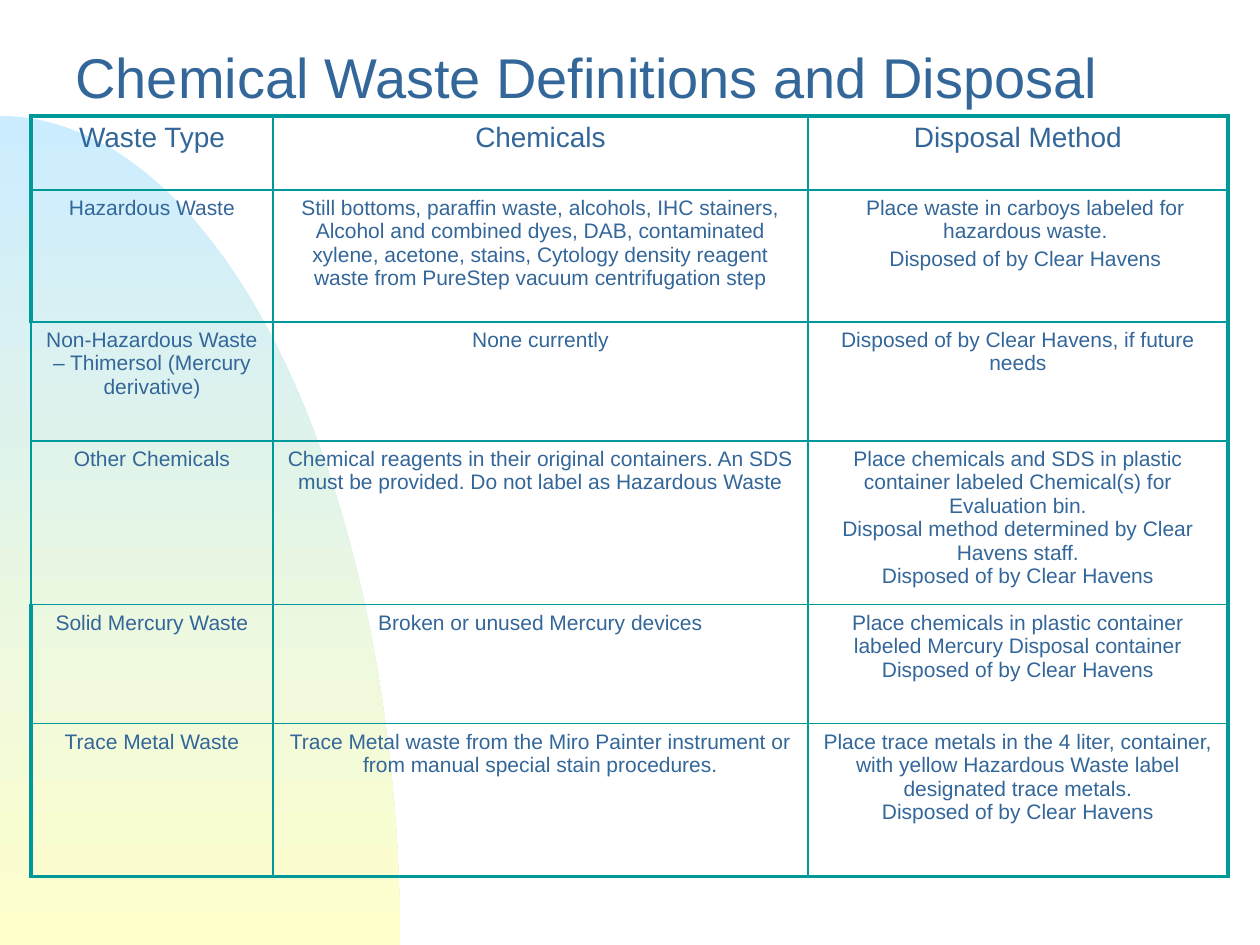
from math import cos, pi, sin

from lxml.etree import SubElement
from pptx import Presentation
from pptx.dml.color import RGBColor
from pptx.enum.text import MSO_ANCHOR, PP_ALIGN
from pptx.oxml import parse_xml
from pptx.oxml.ns import nsdecls, qn
from pptx.util import Emu, Pt

ROWS = [
    ("Waste Type", "Chemicals", "Disposal Method"),
    ("Hazardous Waste",
     "Still bottoms, paraffin waste, alcohols, IHC stainers, Alcohol and combined dyes, DAB, "
     "contaminated xylene, acetone, stains, Cytology density reagent waste from PureStep "
     "vacuum centrifugation step",
     "Place waste in carboys labeled for hazardous waste.\nDisposed of by Clear Havens"),
    ("Non-Hazardous Waste – Thimersol (Mercury derivative)",
     "None currently",
     "Disposed of by Clear Havens, if future needs"),
    ("Other Chemicals",
     "Chemical reagents in their original containers. An SDS must be provided. "
     "Do not label as Hazardous Waste",
     "Place chemicals and SDS in plastic container labeled Chemical(s) for Evaluation bin.\n"
     "Disposal method determined by Clear Havens staff.\nDisposed of by Clear Havens"),
    ("Solid Mercury Waste",
     "Broken or unused Mercury devices",
     "Place chemicals in plastic container labeled Mercury Disposal container\n"
     "Disposed of by Clear Havens"),
    ("Trace Metal Waste",
     "Trace Metal waste from the Miro Painter instrument or from manual special stain procedures.",
     "Place trace metals in the 4 liter, container, with yellow Hazardous Waste label "
     "designated trace metals.\nDisposed of by Clear Havens"),
]
COL_WIDTHS = [242, 535, 420]
ROW_HEIGHTS = [74, 132, 119, 155, 119, 153]
THIN_LEFT_ROWS = (2, 3)
INDENTED_CELL = (1, 2)


def px(n):
    return Emu(round(n * 914400 / 126))


def rgb(value):
    return RGBColor.from_string(value)


class Deck:
    """Holds the style and the current slide, with a method per kind of element."""

    font = "Arial"
    ink = "336699"
    rule = "009999"
    thin, thick = 1, 2.25

    def __init__(self, prs):
        self.s = prs.slides.add_slide(prs.slide_layouts[6])

    def style(self, p, size):
        for r in p.runs:
            r.font.name = self.font
            r.font.size = Pt(size)
            r.font.color.rgb = rgb(self.ink)

    def quarter_ellipse(self, rx, ry, base, colors, steps=90):
        angles = [pi / 2 * i / steps for i in range(steps + 1)]
        points = [(px(rx * sin(a)), px(base - ry * cos(a))) for a in angles]
        builder = self.s.shapes.build_freeform(0, px(base), scale=1.0)
        builder.add_line_segments(points, close=True)
        sp = builder.convert_to_shape()
        sp.shadow.inherit = False
        sp.line.fill.background()
        sp.fill.gradient()
        sp.fill.gradient_angle = 270
        for stop, color, position in zip(sp.fill.gradient_stops, colors, (0, 1)):
            stop.color.rgb = rgb(color)
            stop.position = position

    def title(self, text, x, y, w, h):
        tf = self.s.shapes.add_textbox(px(x), px(y), px(w), px(h)).text_frame
        tf.word_wrap = True
        tf.vertical_anchor = MSO_ANCHOR.MIDDLE
        tf.text = text
        p = tf.paragraphs[0]
        p.line_spacing = 0.7
        self.style(p, 32)

    def borders(self, cell, widths):
        tc_pr = cell._tc.get_or_add_tcPr()
        for i, (side, width) in enumerate(zip("LRTB", widths)):
            ln = parse_xml(f'<a:ln{side} {nsdecls("a")} w="{Pt(width)}"/>')
            fill = SubElement(ln, qn("a:solidFill"))
            SubElement(fill, qn("a:srgbClr"), val=self.rule)
            tc_pr.insert(i, ln)

    def table(self, rows, x, y, col_widths, row_heights):
        last_row, last_col = len(rows) - 1, len(col_widths) - 1
        table = self.s.shapes.add_table(
            len(rows), len(col_widths), px(x), px(y),
            px(sum(col_widths)), px(sum(row_heights))).table
        table.first_row = table.horz_banding = False
        for col, w in zip(table.columns, col_widths):
            col.width = px(w)
        for i, (texts, h) in enumerate(zip(rows, row_heights)):
            table.rows[i].height = px(h)
            for j, text in enumerate(texts):
                cell = table.cell(i, j)
                cell.fill.background()
                cell.text_frame.text = text
                for p in cell.text_frame.paragraphs:
                    p.alignment = PP_ALIGN.CENTER
                    self.style(p, 16 if i == 0 else 12)
                    if (i, j) == INDENTED_CELL:
                        p.space_before = Pt(2.4)
                        p._p.get_or_add_pPr().set("marL", str(px(15)))
                outer = (j == 0 and i not in THIN_LEFT_ROWS, j == last_col,
                         i == 0, i == last_row)
                self.borders(cell, [self.thick if edge else self.thin for edge in outer])


def main():
    prs = Presentation()
    prs.slide_width, prs.slide_height = px(1260), px(945)
    deck = Deck(prs)
    deck.quarter_ellipse(400, 829, 945, ("CCECFF", "FFFFCC"))
    deck.title("Chemical Waste Definitions and Disposal", 63, 42, 1166, 84)
    deck.table(ROWS, 31, 116, COL_WIDTHS, ROW_HEIGHTS)
    prs.save("out.pptx")


if __name__ == "__main__":
    main()
